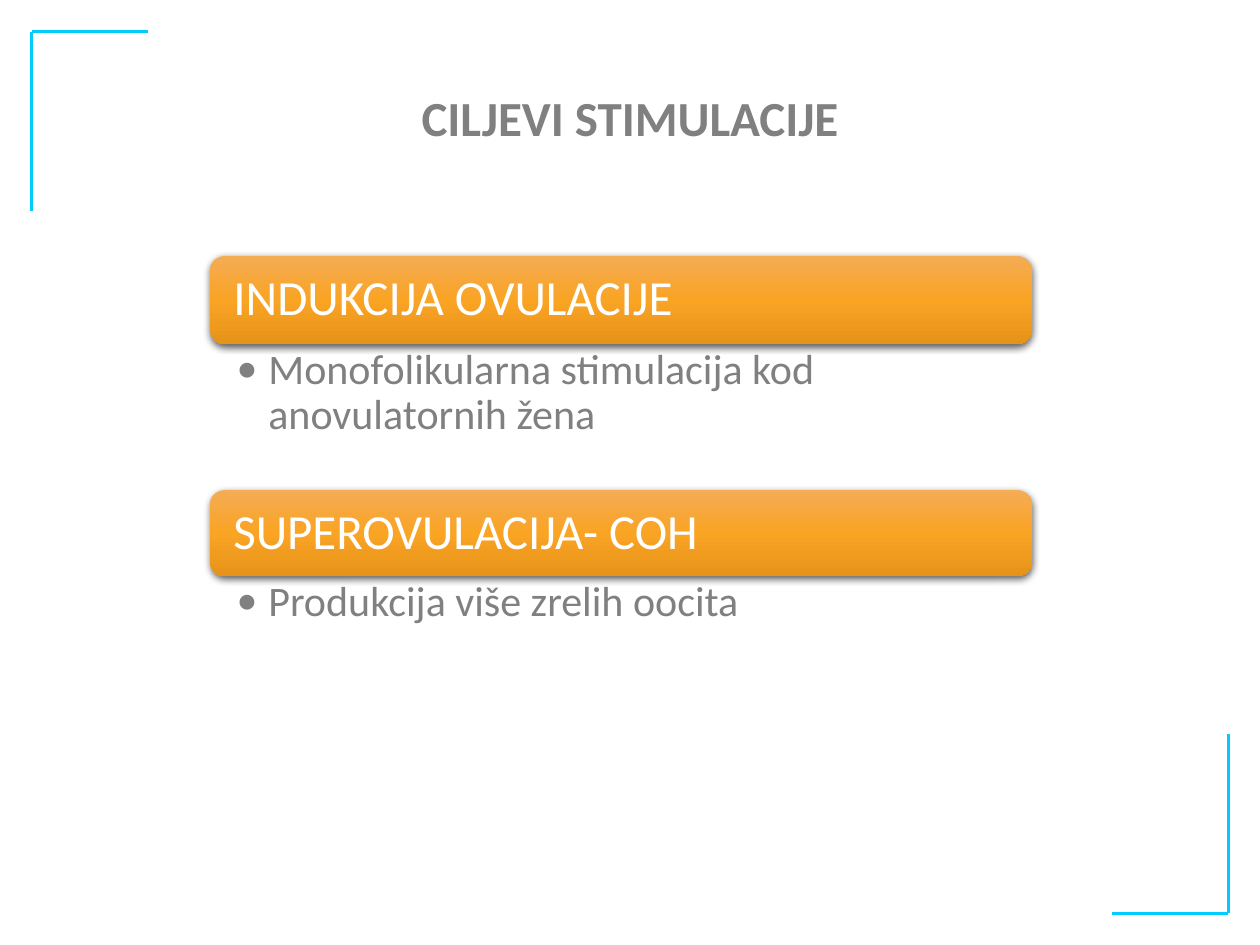
from lxml import etree
from pptx import Presentation
from pptx.dml.color import RGBColor
from pptx.enum.shapes import MSO_CONNECTOR, MSO_SHAPE
from pptx.enum.text import MSO_ANCHOR, MSO_AUTO_SIZE, PP_ALIGN
from pptx.oxml.ns import qn
from pptx.util import Cm, Pt

STRAIGHT = MSO_CONNECTOR.STRAIGHT
ROUNDED = MSO_SHAPE.ROUNDED_RECTANGLE
MIDDLE, TOP = MSO_ANCHOR.MIDDLE, MSO_ANCHOR.TOP
LEFT, CENTER = PP_ALIGN.LEFT, PP_ALIGN.CENTER
NO_FIT = MSO_AUTO_SIZE.NONE

TWO_CONTENT = 3
PAGE_WIDTH, PAGE_HEIGHT = 25.4, 19.05
MARGIN, ARM_ACROSS, ARM_DOWN = 0.64, 2.34, 3.61
GOAL_LEFT, GOAL_WIDTH, LIST_HEIGHT = 4.24, 16.56, 2.95
GRAY, WHITE, CYAN = "808080", "FFFFFF", "00CCFF"
ORANGES = [(0, "F4AC55"), (50, "FAA424"), (100, "E59319")]

# Heading, bar top, bar height, list text
GOALS = [
    ("INDUKCIJA OVULACIJE", 5.16, 1.78,
     "Monofolikularna stimulacija kod anovulatornih žena"),
    ("SUPEROVULACIJA- COH", 9.88, 1.74, "Produkcija više zrelih oocita"),
]


def color(code):
    return RGBColor.from_string(code)


def add_node(parent, tag, **attributes):
    node = etree.SubElement(parent, qn(tag))
    for name, value in attributes.items():
        node.set(name, str(value))
    return node


def place(box, left, top, width, height):
    box.left, box.top = Cm(left), Cm(top)
    box.width, box.height = Cm(width), Cm(height)


def write(box, text, size, code, align, anchor, insets, bold=False):
    frame = box.text_frame
    frame.text = text
    frame.word_wrap = True
    frame.auto_size = NO_FIT
    frame.vertical_anchor = anchor
    frame.margin_left, frame.margin_top, frame.margin_right, frame.margin_bottom = (
        Cm(inset) for inset in insets)
    para = frame.paragraphs[0]
    para.alignment = align
    para.line_spacing = 0.9
    para.space_before = Pt(0)
    span = para.runs[0]
    span.font.name = "Calibri"
    span.font.size = Pt(size)
    span.font.bold = bold
    span.font.color.rgb = color(code)
    return para


def add_line(page, x1, y1, x2, y2):
    line = page.shapes.add_connector(STRAIGHT, Cm(x1), Cm(y1), Cm(x2), Cm(y2))
    line.line.color.rgb = color(CYAN)
    line.line.width = Pt(1.5)
    add_node(line.element.spPr, "a:effectLst")


def add_corner(page, x, y, direction):
    add_line(page, x, y, x + direction * ARM_ACROSS, y)
    add_line(page, x, y, x, y + direction * ARM_DOWN)


def add_bar(page, text, top, height):
    bar = page.shapes.add_shape(
        ROUNDED, Cm(GOAL_LEFT), Cm(top), Cm(GOAL_WIDTH), Cm(height))
    bar.line.fill.background()

    # Three-stop gradient running downwards
    bar.fill.gradient()
    bar.fill.gradient_angle = 270
    properties = bar.element.spPr
    stops = properties.find(qn("a:gradFill")).find(qn("a:gsLst"))
    for stop in list(stops):
        stops.remove(stop)
    for percent, code in ORANGES:
        stop = add_node(stops, "a:gs", pos=percent * 1000)
        add_node(stop, "a:srgbClr", val=code)

    # Soft shadow below the bar
    bar.shadow.inherit = False
    shadow = add_node(properties.find(qn("a:effectLst")), "a:outerShdw",
                      blurRad=Pt(4.5), dist=Pt(1.5), dir=5400000,
                      algn="ctr", rotWithShape=0)
    shade = add_node(shadow, "a:srgbClr", val="000000")
    add_node(shade, "a:alpha", val=63000)

    write(bar, text, 28, WHITE, LEFT, MIDDLE, (0.38, 0.3, 0.38, 0.3))


def fill_list(box, text, top):
    place(box, GOAL_LEFT, top, GOAL_WIDTH, LIST_HEIGHT)
    para = write(box, text, 24, GRAY, LEFT, TOP, (0.53, 0.08, 0.48, 0.08))
    properties = para._p.get_or_add_pPr()
    properties.set("marL", str(Cm(0.64)))
    properties.set("indent", str(-Cm(0.64)))
    add_node(properties, "a:buFont", typeface="Calibri")
    add_node(properties, "a:buChar", char="•")


def main():
    deck = Presentation()
    deck.slide_width, deck.slide_height = Cm(PAGE_WIDTH), Cm(PAGE_HEIGHT)
    page = deck.slides.add_slide(deck.slide_layouts[TWO_CONTENT])
    title, *lists = list(page.placeholders)[:3]

    # Title
    place(title, 1.27, 0.84, 22.86, 3.18)
    write(title, "CILJEVI STIMULACIJE", 28, GRAY, CENTER, MIDDLE,
          (0.25, 0.13, 0.25, 0.13), bold=True)

    # Corner brackets
    add_corner(page, PAGE_WIDTH - MARGIN, PAGE_HEIGHT - MARGIN, -1)
    add_corner(page, MARGIN, MARGIN, 1)

    # Goals: a bar with its list underneath
    for box, (heading, top, height, detail) in zip(lists, GOALS):
        add_bar(page, heading, top, height)
        fill_list(box, detail, top + height)

    # Layout slots that hold no text
    for box in list(page.placeholders):
        if not box.text_frame.text:
            box.element.getparent().remove(box.element)

    deck.save("out.pptx")


if __name__ == "__main__":
    main()
